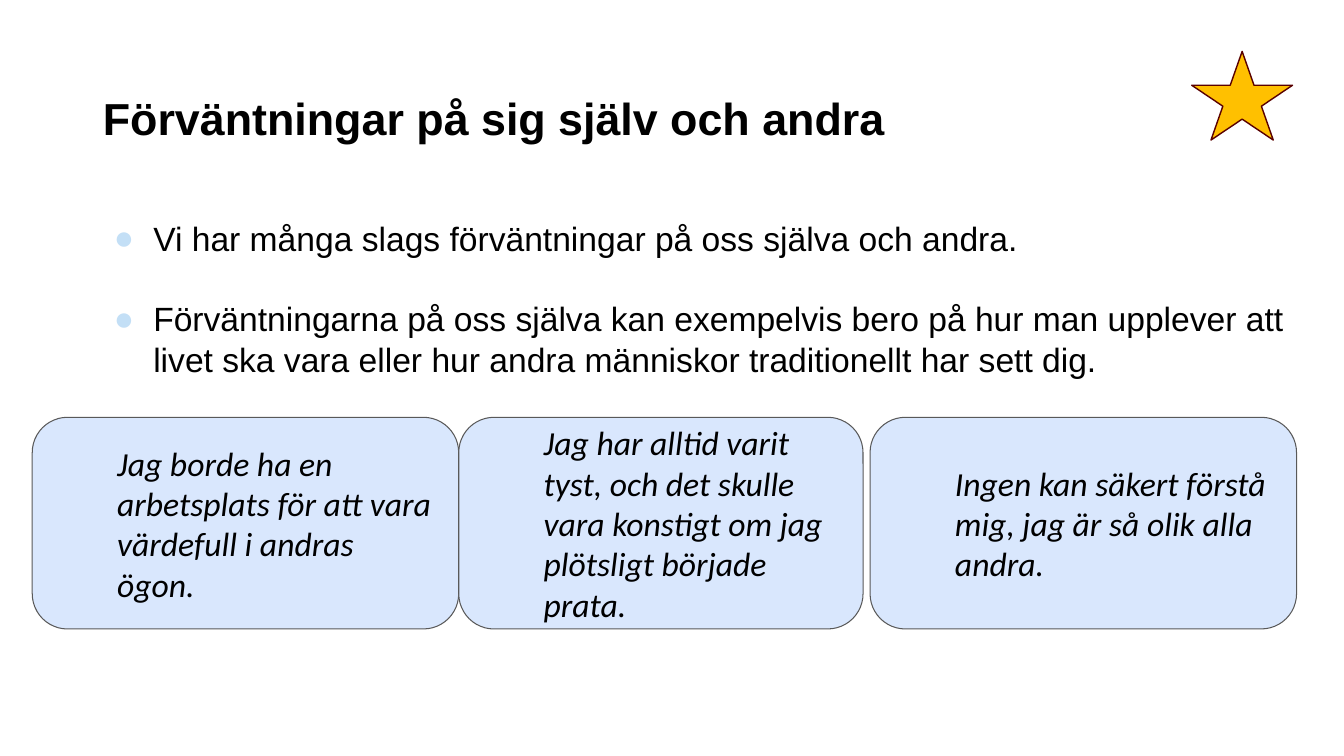
from lxml.etree import SubElement as Sub
from pptx import Presentation
from pptx.dml.color import RGBColor as RGB
from pptx.enum.shapes import MSO_SHAPE as Shape
from pptx.enum.text import MSO_ANCHOR as Anchor, MSO_AUTO_SIZE as Fit, PP_ALIGN as Align
from pptx.oxml.ns import qn
from pptx.util import Inches, Pt

COLORS = {"text": "000000", "dot": "C3DFF6", "card": "D9E7FD",
          "edge": "595959", "star": "FFC000", "rim": "590000"}
LEAD = Pt(28.8)
POINTS = [
    "Vi har många slags förväntningar på oss själva och andra.",
    "Förväntningarna på oss själva kan exempelvis bero på hur man upplever att "
    "livet ska vara eller hur andra människor traditionellt har sett dig.",
]
# Left edge, width and quote of each card
CARDS = [
    (0.32, 4.23, "Jag borde ha en arbetsplats för att vara värdefull i andras ögon."),
    (4.55, 4.01, "Jag har alltid varit tyst, och det skulle vara konstigt om jag "
                 "plötsligt började prata."),
    (8.63, 4.23, "Ingen kan säkert förstå mig, jag är så olik alla andra."),
]


def color(name):
    return RGB.from_string(COLORS[name])


def place(shape, box):
    shape.left, shape.top, shape.width, shape.height = map(Inches, box)


def style(para, size, face="Arial", bold=False, italic=False):
    para.alignment = Align.LEFT
    for run in para.runs:
        font = run.font
        font.name, font.size = face, Pt(size)
        font.bold, font.italic = bold, italic
        font.color.rgb = color("text")


def indent(para, left, hang=0):
    props = para._p.get_or_add_pPr()
    props.set("marL", str(Inches(left)))
    props.set("indent", str(Inches(hang)))
    return props


def add_dot(para):
    props = indent(para, 0.5, -0.39)
    tint = Sub(props, qn("a:buClr"))
    Sub(tint, qn("a:srgbClr"), val=COLORS["dot"])
    Sub(props, qn("a:buFont"), typeface="Arial")
    Sub(props, qn("a:buChar"), char="●")


def add_shape(slide, kind, box, fill, line, width):
    shape = slide.shapes.add_shape(kind, *map(Inches, box))
    shape.shadow.inherit = False
    shape.fill.solid()
    shape.fill.fore_color.rgb = color(fill)
    shape.line.color.rgb = color(line)
    shape.line.width = Pt(width)
    return shape


def add_title(slide, box, text):
    title = slide.shapes.title
    place(title, box)
    frame = title.text_frame
    frame.text = text
    frame.auto_size = Fit.NONE
    frame.vertical_anchor = Anchor.MIDDLE
    style(frame.paragraphs[0], 32, bold=True)


def add_list(slide, box, points):
    body = slide.placeholders[1]
    place(body, box)
    frame = body.text_frame
    frame.text = "\n".join(points)
    frame.auto_size = Fit.NONE
    for i, para in enumerate(frame.paragraphs):
        add_dot(para)
        para.line_spacing = LEAD
        para.space_before = LEAD if i else Pt(0)
        style(para, 24)


def add_card(slide, box, quote):
    card = add_shape(slide, Shape.ROUNDED_RECTANGLE, box, "card", "edge", 0.75)
    frame = card.text_frame
    frame.text = quote
    frame.word_wrap = True
    frame.vertical_anchor = Anchor.MIDDLE
    frame.margin_left = frame.margin_right = Inches(0.13)
    frame.margin_top = frame.margin_bottom = Inches(0.13)
    para = frame.paragraphs[0]
    indent(para, 0.61)
    para.line_spacing = LEAD
    style(para, 24, "Calibri", italic=True)


def main():
    deck = Presentation()
    deck.slide_width, deck.slide_height = Inches(13.33), Inches(7.5)
    slide = deck.slides.add_slide(deck.slide_layouts[1])

    # Heading and points
    add_title(slide, (0.92, 0.74, 11.5, 0.85), "Förväntningar på sig själv och andra")
    add_list(slide, (0.92, 2.11, 12.09, 4.34), POINTS)

    # Quotes
    for left, width, quote in CARDS:
        add_card(slide, (left, 4.14, width, 2.1), quote)

    # Corner star
    add_shape(slide, Shape.STAR_5_POINT, (11.82, 0.51, 1, 0.88), "star", "rim", 1)
    deck.save("out.pptx")


if __name__ == "__main__":
    main()
